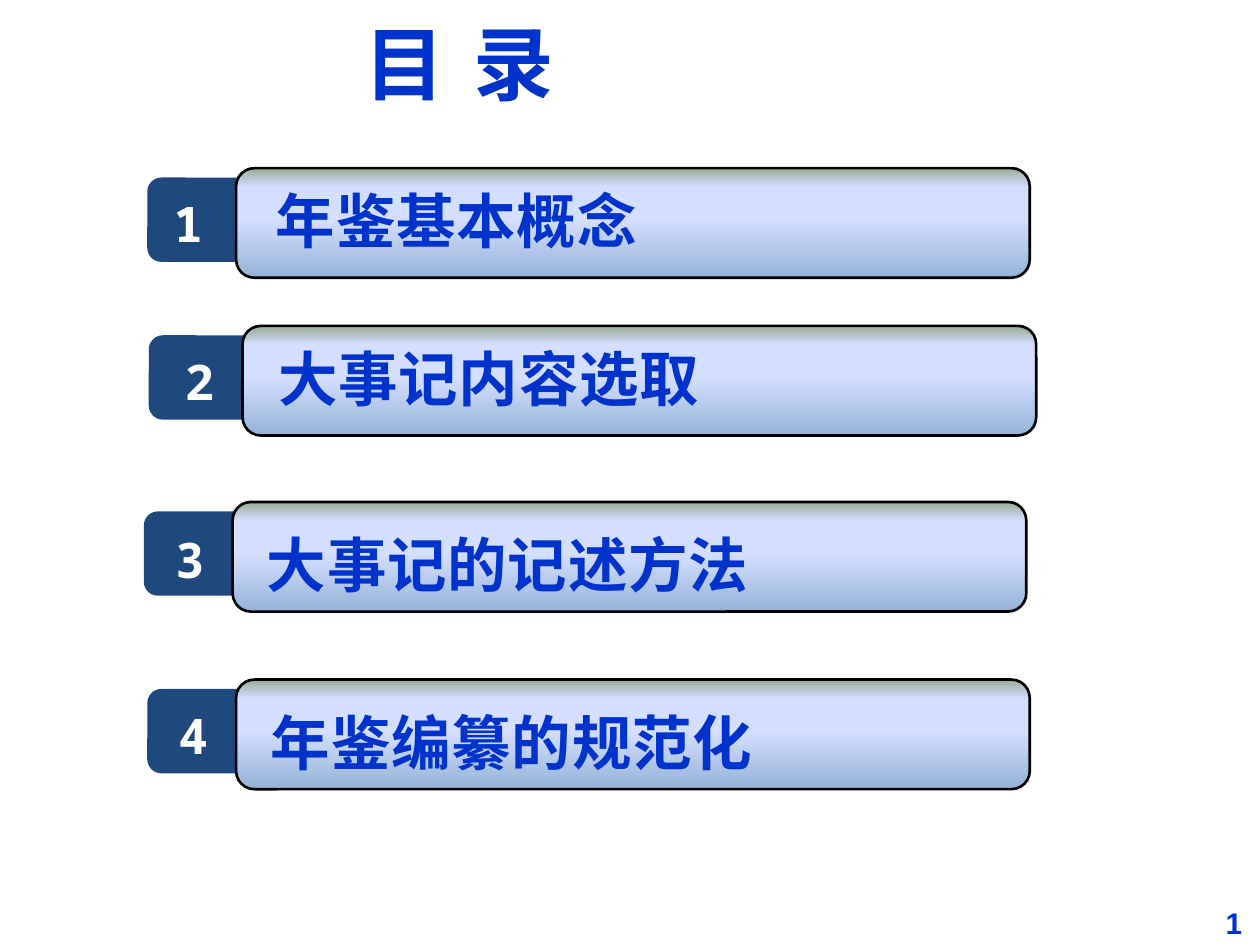
from collections import namedtuple

from lxml import etree
from pptx import Presentation
from pptx.dml.color import RGBColor
from pptx.enum import shapes, text
from pptx.oxml.ns import qn
from pptx.util import Cm, Pt

BLUE, NAVY, WHITE, BLACK = "0033CC", "1F497D", "FFFFFF", "000000"
CJK = "Noto Sans CJK SC"
BAR_STOPS = [(0, "96AB94"), (17, "D4DEFF"), (47, "D4DEFF"), (100, "95B3D7")]

Chapter = namedtuple(
    "Chapter", "heading bar_left bar_top tab_left number_at heading_at")
CHAPTERS = [
    Chapter("年鉴基本概念", 4.76, 3.39, 2.97, (3.25, 3.76), (5.31, 3.58)),
    Chapter("大事记内容选取", 4.89, 6.57, 3.0, (3.48, 6.96), (5.36, 6.76)),
    Chapter("大事记的记述方法", 4.69, 10.12, 2.9, (3.28, 10.54), (5.13, 10.52)),
    Chapter("年鉴编纂的规范化", 4.76, 13.7, 2.97, (3.35, 14.1), (5.21, 14.1)),
]


def rgb(value):
    """Return the colour for a hex string."""
    return RGBColor.from_string(value)


def write(frame, words, size, face, color, spacing=0):
    """Fill a text frame with one bold, left-aligned line."""
    frame.word_wrap = True
    frame.auto_size = text.MSO_AUTO_SIZE.NONE
    frame.vertical_anchor = text.MSO_ANCHOR.MIDDLE
    line = frame.paragraphs[0]
    line.text = words
    line.alignment = text.PP_ALIGN.LEFT
    font = line.font
    font.size, font.bold, font.name = Pt(size), True, face
    font.color.rgb = rgb(color)
    props = font._rPr
    props.set("spc", str(int(spacing * 100)))
    etree.SubElement(props, qn("a:ea"), typeface=face)


def add_label(slide, words, box, size, face, color, spacing=0):
    """Add a text box holding one line."""
    label = slide.shapes.add_textbox(*map(Cm, box))
    write(label.text_frame, words, size, face, color, spacing)


def add_rounded(slide, left, top, width, height):
    """Add a rounded rectangle without shadow."""
    panel = slide.shapes.add_shape(
        shapes.MSO_SHAPE.ROUNDED_RECTANGLE, *map(Cm, (left, top, width, height)))
    panel.adjustments[0] = 0.167
    panel.shadow.inherit = False
    return panel


def add_tab(slide, left, top):
    """Add the dark tab behind a chapter number."""
    tab = add_rounded(slide, left, top, 3.53, 1.7)
    tab.fill.solid()
    tab.fill.fore_color.rgb = rgb(NAVY)
    tab.line.fill.background()


def add_bar(slide, left, top):
    """Add the outlined chapter bar with its vertical gradient."""
    bar = add_rounded(slide, left, top, 16, 2.21)
    bar.fill.gradient()
    bar.fill.gradient_angle = 270
    stops = bar._element.spPr.find(".//" + qn("a:gsLst"))
    for stop in list(stops):
        stops.remove(stop)
    for percent, color in BAR_STOPS:
        stop = etree.SubElement(stops, qn("a:gs"), pos=str(percent * 1000))
        etree.SubElement(stop, qn("a:srgbClr"), val=color)
    bar.line.color.rgb = rgb(BLACK)
    bar.line.width = Pt(1.5)


def add_chapter(slide, number, chapter):
    """Add one numbered entry of the contents."""
    add_tab(slide, chapter.tab_left, chapter.bar_top + 0.19)
    add_bar(slide, chapter.bar_left, chapter.bar_top)
    add_label(slide, str(number), (*chapter.number_at, 1.2, 1.45),
              28, "Noto Sans Mono", WHITE)
    add_label(slide, chapter.heading, (*chapter.heading_at, 15.72, 1.7),
              34, CJK, BLUE, 0.5)


def set_title(slide, words):
    """Place and format the title placeholder."""
    title = slide.shapes.title
    title.left, title.top, title.width, title.height = map(
        Cm, (7.1, 0.13, 13.73, 2.24))
    write(title.text_frame, words, 46, CJK, BLUE, 3)


def main():
    """Build the contents slide."""
    deck = Presentation()
    deck.slide_width, deck.slide_height = Cm(25.4), Cm(19.05)
    slide = deck.slides.add_slide(deck.slide_layouts[5])
    set_title(slide, "目 录")
    for number, chapter in enumerate(CHAPTERS, 1):
        add_chapter(slide, number, chapter)
    add_label(slide, "1", (24.46, 18.14, 0.94, 0.91), 17, "Arial", BLUE, 0.5)
    deck.save("out.pptx")


if __name__ == "__main__":
    main()
